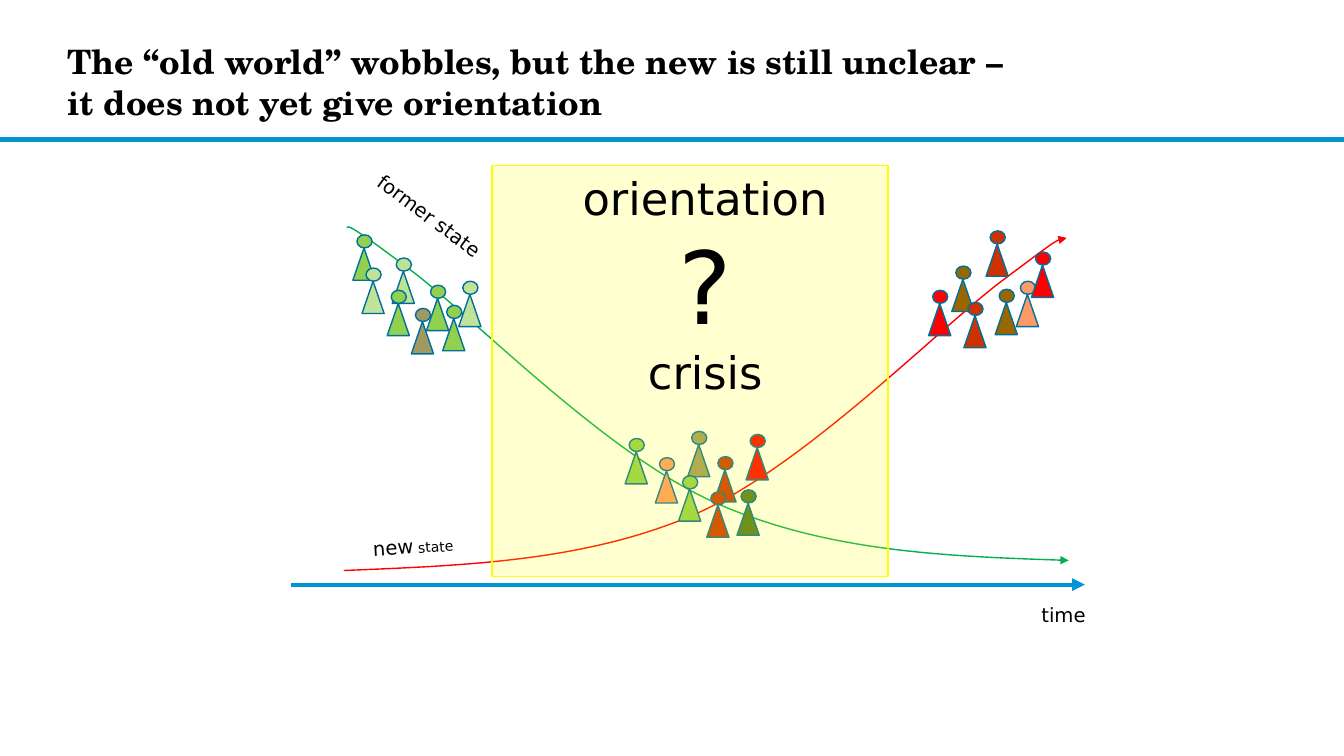
from pptx import Presentation
from pptx.dml.color import RGBColor
from pptx.enum.shapes import MSO_CONNECTOR, MSO_SHAPE
from pptx.enum.text import MSO_ANCHOR, PP_ALIGN
from pptx.oxml.ns import qn
from pptx.util import Pt
from lxml.etree import SubElement

PX = 9144  # 100 px to the inch
SANS, SERIF = "DejaVu Sans", "TeX Gyre Schola"
BLACK, AXIS_BLUE, OUTLINE = "000000", "0096D3", "006F9C"
GREEN, PALE, MINT, OLIVE, MOSS = "92D050", "C0E399", "BEE395", "9F9A5F", "4F7921"
RED, RUST, BROWN, PEACH = "FF0000", "CC3300", "996600", "FF9966"

FORMER_CURVE = [(344, 226), (345, 224), (345, 221), (406, 267), (467, 312),
                (601, 451), (710, 499), (819, 547), (940, 552), (1060, 556)]
NEW_CURVE = [(341, 566), (462, 561), (583, 557), (692, 509), (801, 460),
             (935, 322), (996, 277), (1057, 231), (1058, 234), (1058, 236)]

# Left and top of each body, and its colour
FORMER_CROWD = [(455, 292, PALE), (389, 269, MINT), (384, 301, GREEN),
                (350, 246, GREEN), (359, 279, PALE), (439, 316, GREEN),
                (408, 319, OLIVE), (423, 296, GREEN)]
NEW_CROWD = [(978, 242, RUST), (944, 277, BROWN), (921, 301, RED),
             (1008, 292, PEACH), (956, 313, RUST), (987, 300, BROWN),
             (1023, 263, RED)]
CRISIS_CROWD = [(682, 441, OLIVE), (650, 467, PEACH), (620, 448, GREEN),
                (708, 466, RUST), (673, 485, GREEN), (701, 501, RUST),
                (740, 444, RED), (731, 499, MOSS)]


def px(*values):
    return [v * PX for v in values]


def rgb(color):
    return RGBColor.from_string(color)


def set_line(s, color, width=1):
    s.line.color.rgb = rgb(color)
    s.line.width = Pt(width)


def add_arrowhead(s):
    SubElement(s.line._get_or_add_ln(), qn("a:tailEnd"), type="triangle")


def add_block(shapes, kind, box, fill, line):
    s = shapes.add_shape(kind, *px(*box))
    s.shadow.inherit = False
    s.fill.solid()
    s.fill.fore_color.rgb = rgb(fill)
    set_line(s, line)
    return s


def add_text(slide, box, paragraphs, rotation=0, font=SANS, align=PP_ALIGN.LEFT):
    """Each paragraph is a list of (text, size) runs."""
    s = slide.shapes.add_textbox(*px(*box))
    s.rotation = rotation
    tf = s.text_frame
    tf.word_wrap = False
    for i, runs in enumerate(paragraphs):
        p = tf.add_paragraph() if i else tf.paragraphs[0]
        p.alignment = align
        p.font.name = font
        p.font.color.rgb = rgb(BLACK)
        for text, size in runs:
            r = p.add_run()
            r.text = text
            r.font.size = Pt(size)
    return tf


def add_header(slide, left, top, width, height):
    add_block(slide.shapes, MSO_SHAPE.RECTANGLE, (0, top + height, 1333, 3),
              "0C94B7", AXIS_BLUE)
    title = "The “old world” wobbles, but the new is still unclear – it does not yet give orientation"
    tf = add_text(slide, (left, top, width, height), [[(title, 24)]], font=SERIF)
    tf.word_wrap = True
    tf.vertical_anchor = MSO_ANCHOR.MIDDLE
    tf.margin_left = tf.margin_right = tf.margin_top = tf.margin_bottom = 0
    tf.paragraphs[0].font.bold = True


def add_time_axis(slide, left, top, width):
    right = left + width
    c = slide.shapes.add_connector(MSO_CONNECTOR.STRAIGHT,
                                   *px(left, top, right, top))
    set_line(c, AXIS_BLUE, 3)
    add_arrowhead(c)
    SubElement(c._element.spPr, qn("a:effectLst"))
    add_text(slide, (right - 53, top + 13, 64, 34), [[("time", 14)]])


def add_curve(slide, points, color):
    """Draw a chain of cubic Bézier arcs: a start, then three points per arc."""
    builder = slide.shapes.build_freeform(*points[0], scale=PX)
    builder.add_line_segments(points[1:], close=False)
    s = builder.convert_to_shape()
    s.shadow.inherit = False
    s.fill.background()
    set_line(s, color)
    add_arrowhead(s)
    path = next(s._element.iter(qn("a:path")))
    steps = path.findall(qn("a:lnTo"))
    for i in range(0, len(steps), 3):
        arc = SubElement(path, qn("a:cubicBezTo"))
        for step in steps[i:i + 3]:
            arc.append(step[0])
            path.remove(step)


def add_crowd(slide, people):
    group = slide.shapes.add_group_shape()
    for x, y, color in people:
        add_block(group.shapes, MSO_SHAPE.ISOSCELES_TRIANGLE, (x, y, 22, 32),
                  color, OUTLINE)
        add_block(group.shapes, MSO_SHAPE.OVAL, (x + 4, y - 13, 15, 13),
                  color, OUTLINE)


def add_crisis_zone(slide, left, top, width, height):
    s = add_block(slide.shapes, MSO_SHAPE.RECTANGLE, (left, top, width, height),
                  "FFFF00", "FFFF00")
    fill = next(s._element.spPr.iter(qn("a:srgbClr")))
    SubElement(fill, qn("a:alpha"), val="19000")
    tf = add_text(slide, (left + 80, top, 264, 239),
                  [[("orientation", 32)], [("?", 72)], [("crisis", 32)]],
                  align=PP_ALIGN.CENTER)
    tf.paragraphs[0].alignment = PP_ALIGN.LEFT


def main():
    prs = Presentation()
    prs.slide_width, prs.slide_height = px(1333, 750)
    slide = prs.slides.add_slide(prs.slide_layouts[6])
    add_header(slide, 67, 25, 940, 112)
    add_time_axis(slide, 289, 580, 787)
    add_curve(slide, FORMER_CURVE, "00B050")
    add_text(slide, (355, 198, 143, 34), [[("former state", 14)]], 36.4)
    add_crowd(slide, FORMER_CROWD)
    add_curve(slide, NEW_CURVE, RED)
    add_text(slide, (360, 525, 101, 34), [[("new", 14), (" state", 10)]], -3.8)
    add_crowd(slide, NEW_CROWD)
    add_crowd(slide, CRISIS_CROWD)
    add_crisis_zone(slide, 488, 164, 393, 408)
    prs.save("out.pptx")


if __name__ == "__main__":
    main()
